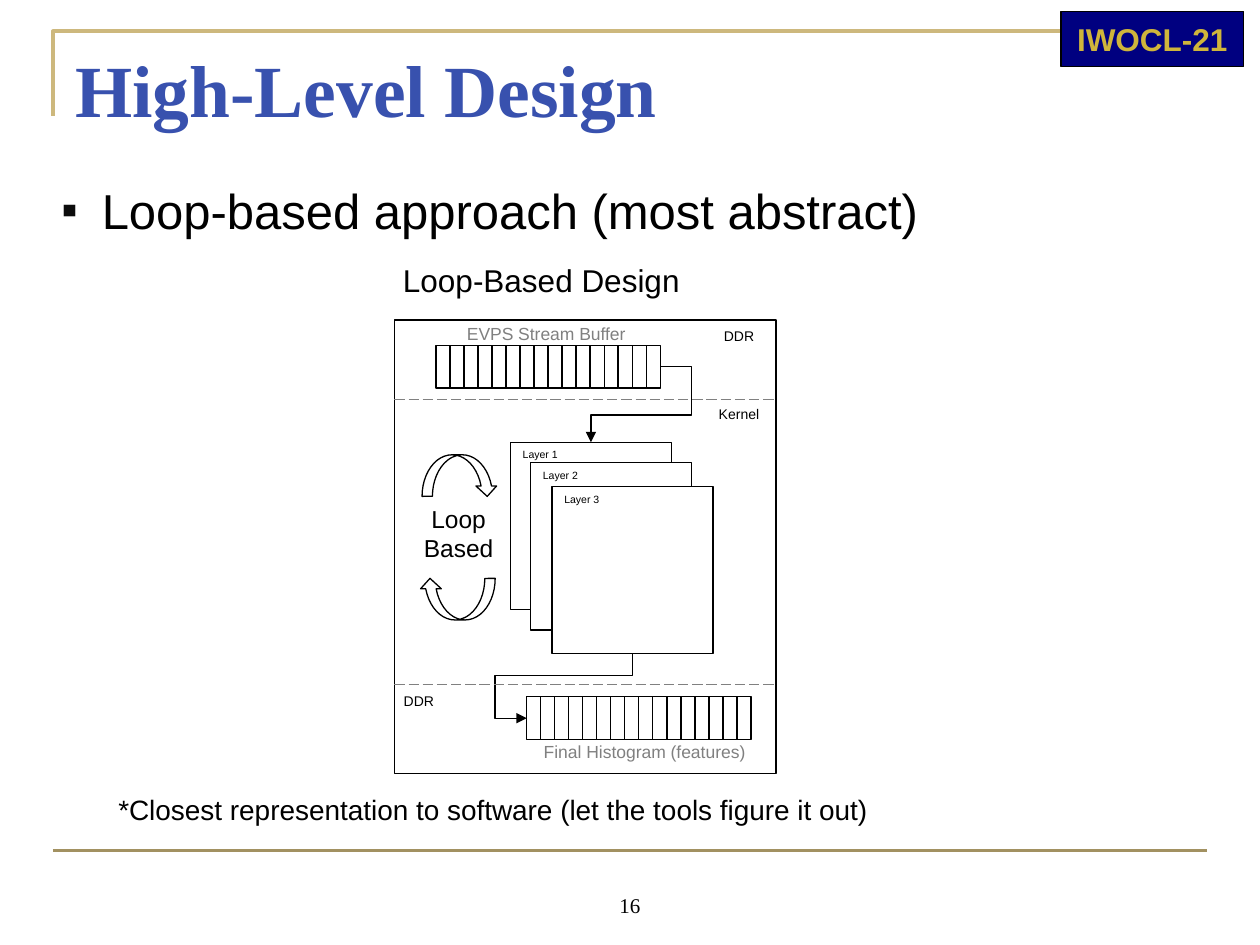
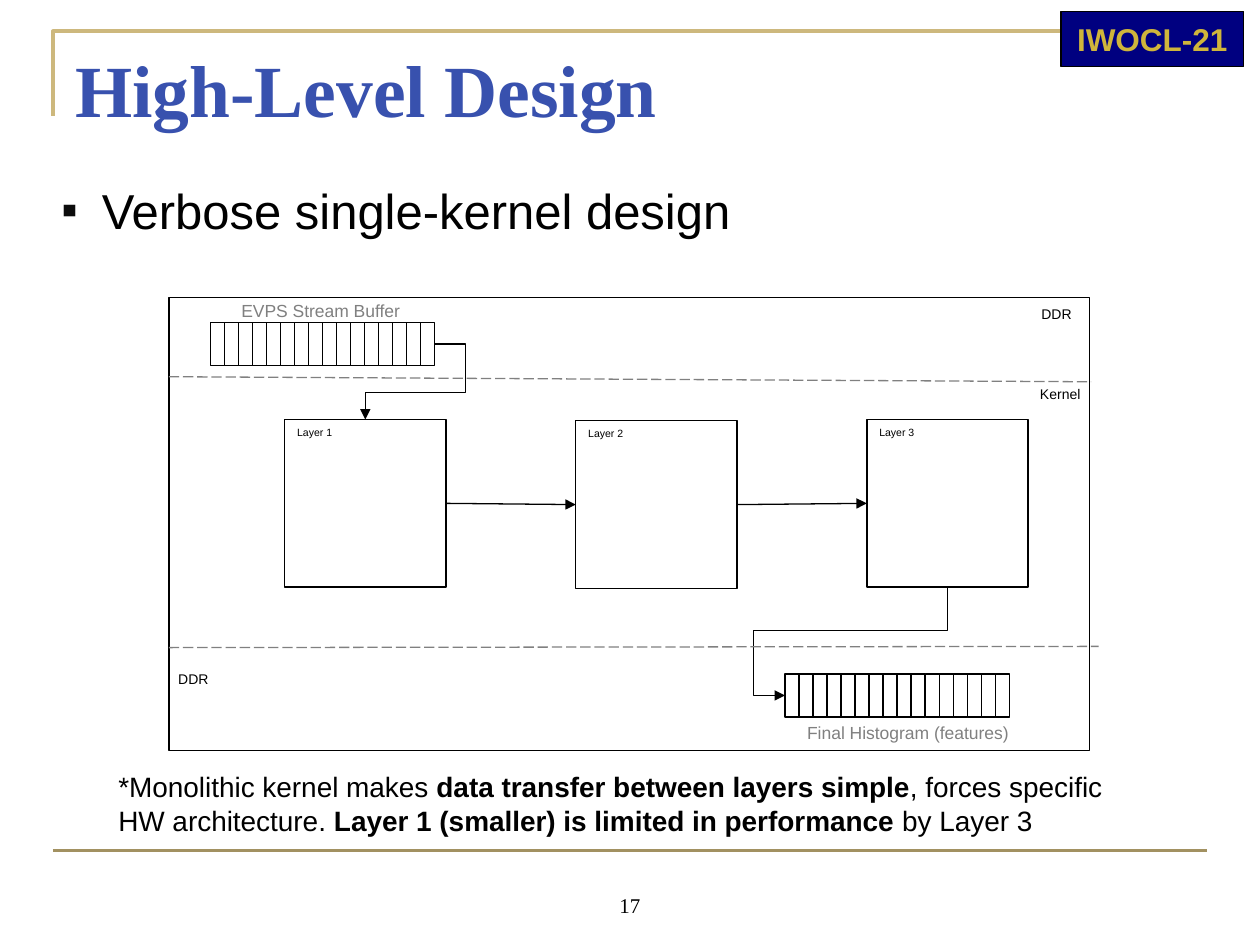
from lxml.etree import SubElement
from pptx import Presentation
from pptx.dml.color import RGBColor
from pptx.enum.dml import MSO_LINE
from pptx.enum.shapes import MSO_CONNECTOR, MSO_SHAPE
from pptx.enum.text import MSO_ANCHOR, PP_ALIGN
from pptx.oxml.ns import qn
from pptx.util import Inches, Pt

BLACK, WHITE, GRAY = "000000", "FFFFFF", "808080"
NAVY, GOLD, BLUE, SAND, KHAKI = "000080", "CFB53B", "3851AE", "CDB87D", "A29161"
CELL_COUNT, STRIP_WIDTH, STRIP_HEIGHT = 16, 1.78, 0.34
LAYER_WIDTH, LAYER_HEIGHT = 1.28, 1.33
rgb = RGBColor.from_string


def add_box(shapes, area, segments=(), size=6, color=BLACK, font="Arial", bold=False,
            kind=MSO_SHAPE.RECTANGLE, fill=None, align=PP_ALIGN.LEFT, anchor=MSO_ANCHOR.TOP):
    """Add a preset shape, or a text box when kind is None; every second segment is bold."""
    lengths = [Inches(value) for value in area]
    if kind is None:
        shape = shapes.add_textbox(*lengths)
    else:
        shape = shapes.add_shape(kind, *lengths)
        shape.shadow.inherit = False
        shape.line.color.rgb = rgb(BLACK)
        shape.line.width = Pt(0.75)
        if fill:
            shape.fill.solid()
            shape.fill.fore_color.rgb = rgb(fill)
        else:
            shape.fill.background()
    text_frame = shape.text_frame
    text_frame.word_wrap = True
    text_frame.vertical_anchor = anchor
    paragraph = text_frame.paragraphs[0]
    paragraph.alignment = align
    for index, segment in enumerate(segments):
        run = paragraph.add_run()
        run.text = segment
        run.font.size = Pt(size)
        run.font.name = font
        run.font.bold = bold or index % 2 == 1
        run.font.color.rgb = rgb(color)
    return shape


def add_line(shapes, start, end, color=BLACK, width=0.75, arrow=False, dashed=False, bends=None):
    """Add a straight line, or an elbow with three bends when bends gives its two adjustments."""
    kind = MSO_CONNECTOR.ELBOW if bends else MSO_CONNECTOR.STRAIGHT
    connector = shapes.add_connector(kind, *[Inches(value) for value in (*start, *end)])
    connector.line.color.rgb = rgb(color)
    connector.line.width = Pt(width)
    if dashed:
        connector.line.dash_style = MSO_LINE.LONG_DASH
    properties = connector._element.spPr
    if arrow:
        SubElement(properties.find(qn("a:ln")), qn("a:tailEnd"), type="triangle")
    SubElement(properties, qn("a:effectLst"))
    if bends:
        geometry = properties.find(qn("a:prstGeom"))
        geometry.set("prst", "bentConnector4")
        adjustments = geometry.find(qn("a:avLst"))
        if adjustments is None:
            adjustments = SubElement(geometry, qn("a:avLst"))
        for number, bend in enumerate(bends, 1):
            SubElement(adjustments, qn("a:gd"), name=f"adj{number}", fmla=f"val {round(bend * 100000)}")
    return connector


designs = [
    {
        "page": "16",
        "bullet": "Loop-based approach (most abstract)",
        "frame": (3.13, 2.54, 3.03, 3.6),
        "strips": [(3.46, 2.74), (4.18, 5.53)],
        "layers": [(4.05, 3.51), (4.21, 3.67), (4.38, 3.86)],
        "output_bends": (0.337, 1.299),
        "dividers": [((3.13, 3.17), (6.17, 3.17)), ((3.13, 5.43), (6.17, 5.43))],
        "captions": [(3.17, 2.51), (3.95, 5.83)],
        "zones": [("Kernel", 5.52, 3.15), ("DDR", 5.52, 2.53), ("DDR", 2.98, 5.43)],
        "note": ["*Closest representation to software (let the tools figure it out)"],
        "note_area": (0.84, 6.24, 8.32, 0.37),
    },
    {
        "page": "17",
        "bullet": "Verbose single-kernel design",
        "frame": (1.34, 2.36, 7.31, 3.6),
        "strips": [(1.67, 2.56), (6.23, 5.35)],
        "layers": [(2.26, 3.33), (4.57, 3.34), (6.88, 3.33)],
        "output_bends": (0.402, 1.194),
        "dividers": [((1.34, 2.99), (8.66, 3.03)), ((1.34, 5.14), (8.72, 5.13))],
        "captions": [(1.38, 2.33), (6.04, 5.68)],
        "zones": [("Kernel", 8.07, 2.99), ("DDR", 8.04, 2.36), ("DDR", 1.19, 5.25)],
        "note": ["*Monolithic kernel makes ", "data transfer between layers simple",
                 ", forces specific HW architecture. ",
                 "Layer 1 (smaller) is limited in performance ", "by Layer 3"],
        "note_area": (0.84, 6.06, 8.32, 0.64),
    },
]

presentation = Presentation()
presentation.slide_width = Inches(10)
presentation.slide_height = Inches(7.5)

for design in designs:
    slide = presentation.slides.add_slide(presentation.slide_layouts[6])
    shapes = slide.shapes

    builder = shapes.build_freeform(Inches(0.42), Inches(0.92))
    builder.add_line_segments([(Inches(0.42), Inches(0.25)), (Inches(9.42), Inches(0.25))], close=False)
    corner = builder.convert_to_shape()
    corner.shadow.inherit = False
    corner.fill.background()
    corner.line.color.rgb = rgb(SAND)
    corner.line.width = Pt(2.25)
    add_line(shapes, (0.42, 6.75), (9.58, 6.75), KHAKI, 2.25)
    add_box(shapes, (8.42, 0.09, 1.45, 0.44), ["IWOCL-21"], 18, GOLD, bold=True, fill=NAVY,
            align=PP_ALIGN.CENTER, anchor=MSO_ANCHOR.MIDDLE)
    add_box(shapes, (0.5, 0.3, 9, 1.03), ["High-Level Design"], 42, BLUE, "Times New Roman", True, None)

    body = add_box(shapes, (0.33, 1.38, 9.33, 5.32), [design["bullet"]], 28, kind=None)
    paragraph_properties = body.text_frame.paragraphs[0]._p.get_or_add_pPr()
    paragraph_properties.set("marL", str(Inches(0.38)))
    paragraph_properties.set("indent", str(Inches(-0.32)))
    bullet_color = SubElement(paragraph_properties, qn("a:buClr"))
    SubElement(bullet_color, qn("a:srgbClr"), val="0C0C0C")
    SubElement(paragraph_properties, qn("a:buSzPct"), val="95000")
    SubElement(paragraph_properties, qn("a:buFont"), typeface="Arial")
    SubElement(paragraph_properties, qn("a:buChar"), char="▪")

    add_box(shapes, (4, 6.83, 2, 0.5), [design["page"]], 12, font="Times New Roman", kind=None,
            align=PP_ALIGN.CENTER, anchor=MSO_ANCHOR.BOTTOM)

    add_box(shapes, design["frame"])
    cell_width = STRIP_WIDTH / CELL_COUNT
    for left, top in design["strips"]:
        strip = shapes.add_group_shape()
        for index in range(CELL_COUNT):
            add_box(strip.shapes, (left + index * cell_width, top, cell_width, STRIP_HEIGHT))
    for number, (left, top) in enumerate(design["layers"], 1):
        add_box(shapes, (left, top, LAYER_WIDTH, LAYER_HEIGHT), [f"Layer {number}"],
                fill=WHITE if number > 1 else None)

    (buffer_left, buffer_top), (histogram_left, histogram_top) = design["strips"]
    first_left, first_top = design["layers"][0]
    last_left, last_top = design["layers"][-1]
    add_line(shapes, (buffer_left + STRIP_WIDTH, buffer_top + STRIP_HEIGHT / 2),
             (first_left + LAYER_WIDTH / 2, first_top), arrow=True, bends=(-0.449, 0.64))

    output_x, output_y = last_left + LAYER_WIDTH / 2, last_top + LAYER_HEIGHT
    target_y = histogram_top + STRIP_HEIGHT / 2
    center_x, center_y = (output_x + histogram_left) / 2, (output_y + target_y) / 2
    half_width, half_height = (target_y - output_y) / 2, (output_x - histogram_left) / 2
    output = add_line(shapes, (center_x - half_width, center_y - half_height),
                      (center_x + half_width, center_y + half_height),
                      arrow=True, bends=design["output_bends"])
    output._element.spPr.find(qn("a:xfrm")).set("rot", "5400000")

    for caption, (left, top) in zip(["EVPS Stream Buffer", "Final Histogram (features)"], design["captions"]):
        add_box(shapes, (left, top, 2.33, 0.27), [caption], 10, GRAY, kind=None,
                align=PP_ALIGN.CENTER, anchor=MSO_ANCHOR.MIDDLE)
    for start, end in design["dividers"]:
        add_line(shapes, start, end, GRAY, dashed=True)
    for zone, left, top in design["zones"]:
        add_box(shapes, (left, top, 0.69, 0.27), [zone], 8, kind=None,
                align=PP_ALIGN.CENTER, anchor=MSO_ANCHOR.MIDDLE)
    add_box(shapes, design["note_area"], design["note"], 16, kind=None)

loop_slide, kernel_slide = presentation.slides

add_box(loop_slide.shapes, (3.1, 2.02, 2.6, 0.4), ["Loop-Based Design"], 18, kind=None)
add_box(loop_slide.shapes, (3.25, 3.95, 0.78, 0.57), ["Loop Based"], 14, kind=None, align=PP_ALIGN.CENTER)
for left, top, rotation in [(3.35, 3.61, 0), (3.33, 4.59, 180)]:
    loop_arrow = add_box(loop_slide.shapes, (left, top, 0.6, 0.33), kind=MSO_SHAPE.CURVED_DOWN_ARROW)
    loop_arrow.rotation = rotation

layers = designs[1]["layers"]
for (left, top), (next_left, next_top) in zip(layers, layers[1:]):
    add_line(kernel_slide.shapes, (left + LAYER_WIDTH, top + LAYER_HEIGHT / 2),
             (next_left, next_top + LAYER_HEIGHT / 2), arrow=True)

presentation.save("out.pptx")
